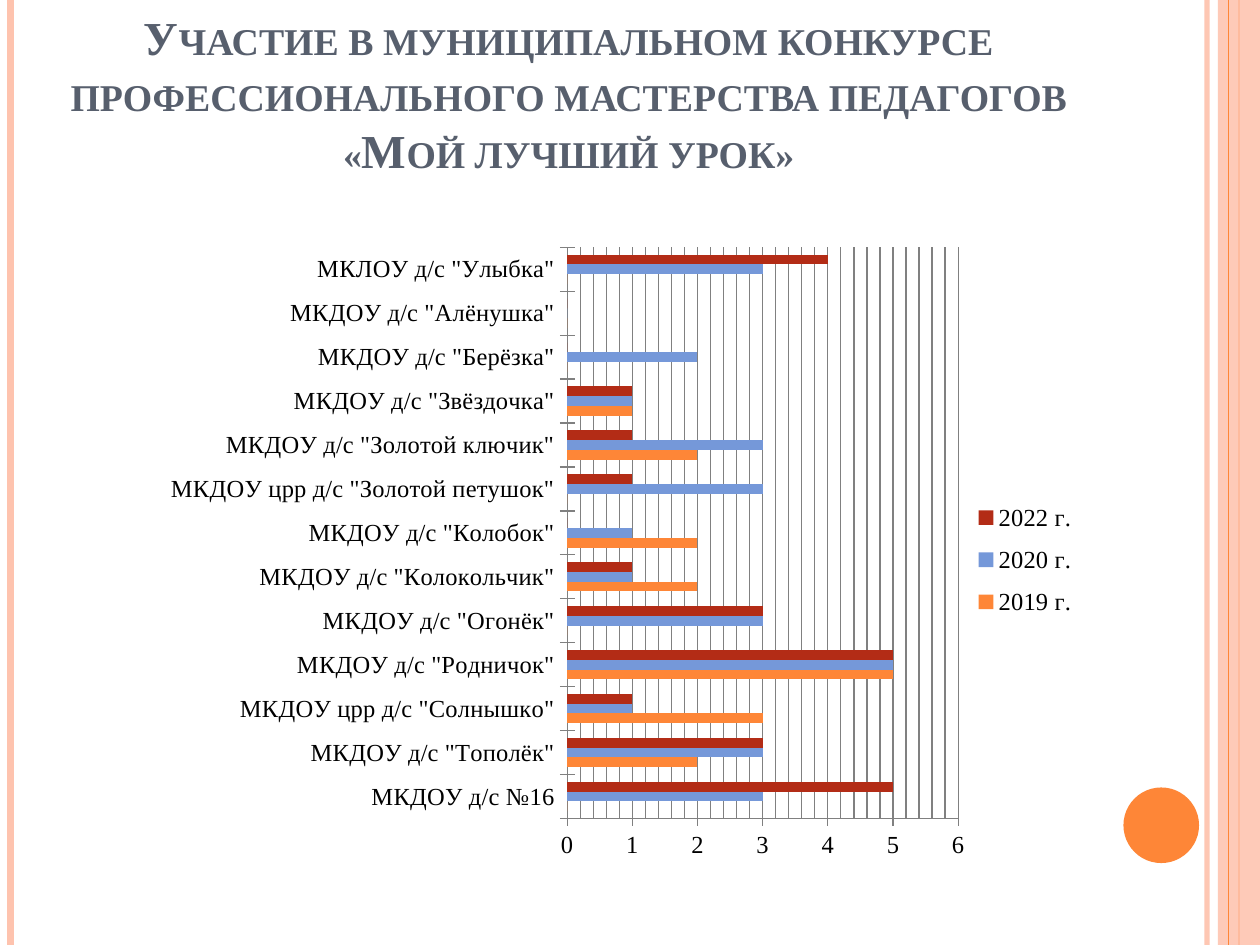
from copy import deepcopy

from lxml import etree
from pptx import Presentation
from pptx.chart.data import CategoryChartData
from pptx.dml.color import RGBColor
from pptx.enum.chart import XL_CHART_TYPE, XL_LEGEND_POSITION, XL_TICK_MARK
from pptx.enum.shapes import MSO_CONNECTOR, MSO_SHAPE
from pptx.enum.text import MSO_ANCHOR, PP_ALIGN
from pptx.oxml import parse_xml
from pptx.oxml.ns import nsdecls, qn
from pptx.util import Pt

COLORS = {
    "orange": "FE8637", "peach": "FEC3AE", "blue": "7598D9", "red": "B32C16",
    "slate": "575F6D", "black": "000000", "grid": "808080",
}
FONT = "Times New Roman"
WIDTH, HEIGHT = 720, 540

KINDERGARTENS = [
    "МКДОУ д/с №16", 'МКДОУ д/с "Тополёк"', 'МКДОУ црр д/с "Солнышко"',
    'МКДОУ д/с "Родничок"', 'МКДОУ д/с "Огонёк"', 'МКДОУ д/с "Колокольчик"',
    'МКДОУ д/с "Колобок"', 'МКДОУ црр д/с "Золотой петушок"',
    'МКДОУ д/с "Золотой ключик"', 'МКДОУ д/с "Звёздочка"',
    'МКДОУ д/с "Берёзка"', 'МКДОУ д/с "Алёнушка"', 'МКЛОУ д/с "Улыбка"',
]
YEARS = [
    ("2019 г.", "orange", (0, 2, 3, 5, 0, 2, 2, 0, 2, 1, 0, 0, 0)),
    ("2020 г.", "blue", (3, 3, 1, 5, 3, 1, 1, 3, 3, 1, 2, 0, 3)),
    ("2022 г.", "red", (5, 3, 1, 5, 3, 1, 0, 1, 1, 1, 0, 0, 4)),
]


def rgb(name):
    return RGBColor.from_string(COLORS[name])


def set_opacity(properties, percent):
    for color in properties.iter(qn("a:srgbClr")):
        etree.SubElement(color, qn("a:alpha")).set("val", str(percent * 1000))


def add_vertical_line(slide, x, top, height, color, width, opacity=100):
    line = slide.shapes.add_connector(
        MSO_CONNECTOR.STRAIGHT, Pt(x), Pt(top), Pt(x), Pt(top + height))
    line.line.color.rgb = rgb(color)
    line.line.width = Pt(width)
    properties = line._element.spPr
    if opacity < 100:
        set_opacity(properties, opacity)
    etree.SubElement(properties, qn("a:effectLst"))


def add_filled_shape(slide, kind, box, color, opacity=100):
    shape = slide.shapes.add_shape(kind, *map(Pt, box))
    shape.shadow.inherit = False
    shape.fill.solid()
    shape.fill.fore_color.rgb = rgb(color)
    shape.line.fill.background()
    if opacity < 100:
        set_opacity(shape._element.spPr, opacity)


def add_text(slide, box, text, size, color, bold=False, small_caps=False,
             align=PP_ALIGN.LEFT, anchor=MSO_ANCHOR.TOP, line_height=None):
    frame = slide.shapes.add_textbox(*map(Pt, box)).text_frame
    frame.word_wrap = True
    frame.vertical_anchor = anchor
    paragraph = frame.paragraphs[0]
    paragraph.text = text
    paragraph.alignment = align
    if line_height:
        paragraph.line_spacing = Pt(line_height)
    for run in paragraph.runs:
        run.font.name = FONT
        run.font.size = Pt(size)
        run.font.bold = bold
        run.font.color.rgb = rgb(color)
        if small_caps:
            run.font._element.set("cap", "small")


def add_frame(slide, box):
    """Stripes along both edges and the circle at the lower right."""
    left, top, width, height = box
    right = left + width
    add_vertical_line(slide, right - 30.24, top, height, "peach", 3, 93)
    add_vertical_line(slide, left + 6, top, height, "peach", 4.5)
    add_vertical_line(slide, right - 12, top, height, "orange", 1.5)
    add_filled_shape(slide, MSO_SHAPE.RECTANGLE, (right - 24, top, 24, height), "peach", 87)
    add_vertical_line(slide, right - 18, top, height, "orange", 0.75)
    add_filled_shape(slide, MSO_SHAPE.OVAL, (right - 78, top + 450, 43.2, 43.2), "orange")


def set_layout(element, x, y, width, height, inner=False):
    """Fix the place of a chart part, in fractions of the chart."""
    for old in element.findall(qn("c:layout")):
        element.remove(old)
    target = '<c:layoutTarget val="inner"/>' if inner else ""
    layout = parse_xml(
        f'<c:layout {nsdecls("c")}><c:manualLayout>{target}'
        '<c:xMode val="edge"/><c:yMode val="edge"/>'
        f'<c:x val="{x}"/><c:y val="{y}"/><c:w val="{width}"/><c:h val="{height}"/>'
        '</c:manualLayout></c:layout>')
    element.insert(0 if inner else 1, layout)


def add_participation_chart(slide, box):
    data = CategoryChartData()
    data.categories = KINDERGARTENS
    for year, _, values in YEARS:
        data.add_series(year, values)
    chart = slide.shapes.add_chart(XL_CHART_TYPE.BAR_CLUSTERED, *map(Pt, box), data).chart
    chart.has_title = False
    chart.font.name = FONT
    chart.font.size = Pt(14)
    chart.font.color.rgb = rgb("black")

    plot = chart.plots[0]
    plot.gap_width = 150
    plot.overlap = 0
    plot.vary_by_categories = False
    for series, (_, color, _) in zip(plot.series, YEARS):
        series.format.fill.solid()
        series.format.fill.fore_color.rgb = rgb(color)

    values_axis = chart.value_axis
    values_axis.minimum_scale, values_axis.maximum_scale = 0, 6
    values_axis.major_unit, values_axis.minor_unit = 1, 0.2
    values_axis.has_major_gridlines = values_axis.has_minor_gridlines = True
    for axis in (chart.category_axis, values_axis):
        axis.major_tick_mark = XL_TICK_MARK.CROSS
    for part in (chart.category_axis, values_axis, values_axis.major_gridlines):
        part.format.line.color.rgb = rgb("grid")
        part.format.line.width = Pt(0.75)
    axis_element = values_axis._element
    major_style = axis_element.find(qn("c:majorGridlines")).find(qn("c:spPr"))
    axis_element.find(qn("c:minorGridlines")).append(deepcopy(major_style))

    chart.has_legend = True
    chart.legend.position = XL_LEGEND_POSITION.RIGHT
    chart.legend.include_in_layout = False
    set_layout(chart.legend._element, 0.88, 0.4, 0.11, 0.21)
    set_layout(plot._element.getparent(), 0.49, 0.04, 0.38, 0.85, inner=True)


def main():
    presentation = Presentation()
    presentation.slide_width, presentation.slide_height = Pt(WIDTH), Pt(HEIGHT)
    slide = presentation.slides.add_slide(presentation.slide_layouts[6])
    add_frame(slide, (0, 0, WIDTH, HEIGHT))
    add_text(slide, (31, 15, 588, 90),
             "Участие в муниципальном конкурсе\v"
             "профессионального мастерства педагогов «Мой лучший урок»",
             27, "slate", bold=True, small_caps=True, align=PP_ALIGN.CENTER,
             anchor=MSO_ANCHOR.BOTTOM, line_height=32.3)
    add_participation_chart(slide, (36, 126, 588, 384))
    presentation.save("out.pptx")


if __name__ == "__main__":
    main()
